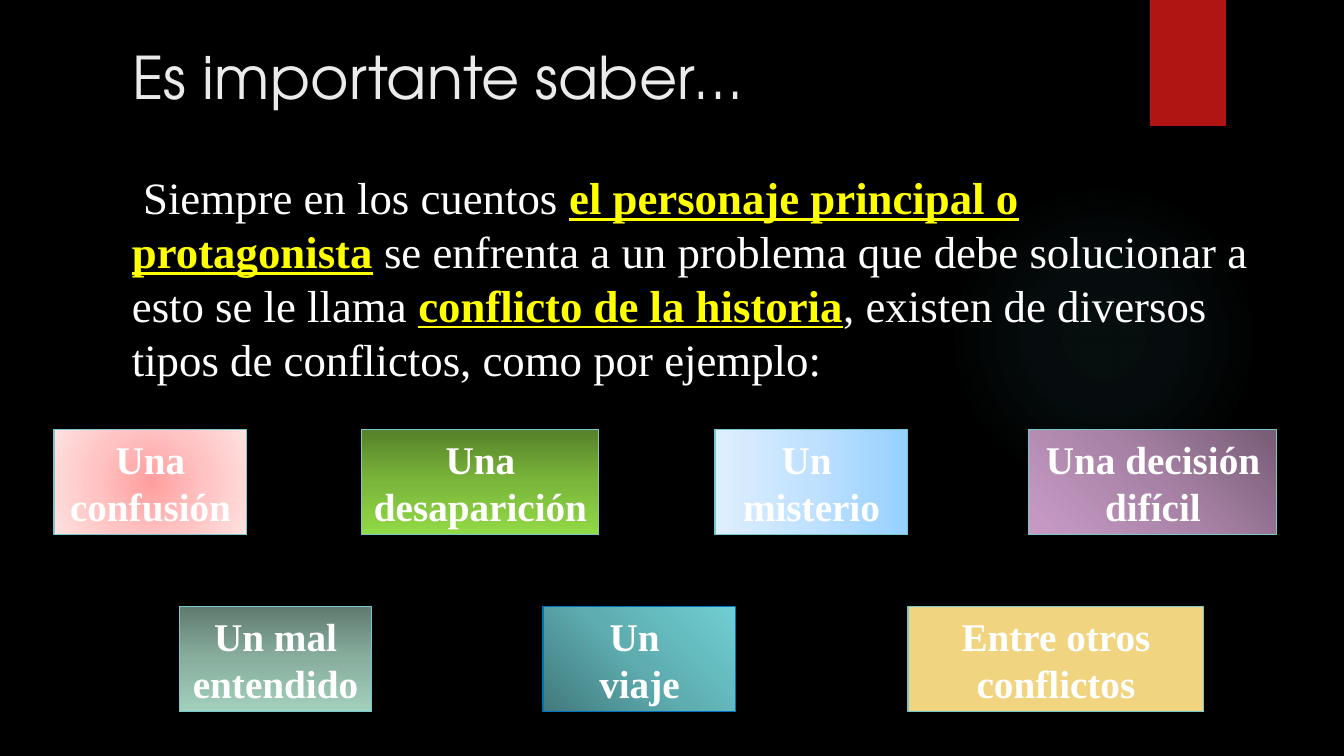
import lxml.etree
import pptx
import pptx.dml.color
import pptx.enum.shapes
import pptx.enum.text
import pptx.oxml.ns
import pptx.util

EMU_PER_PX = 12192000 / 1344
SERIF = "Times New Roman"
COLOURS = {
    "background": "000000",
    "ribbon": "B01513",
    "glow": "50B9C1",
    "title": "EBEBEB",
    "text": "FFFFFF",
    "key": "FFFF00",
    "border": "76C8CC",
    "blue_border": "0070C0",
    "sand": "F0D47F",
}

BODY = [  # text, is a key phrase
    (" Siempre en los cuentos ", False),
    ("el personaje principal o protagonista", True),
    (" se enfrenta a un problema que debe solucionar a esto se le llama ", False),
    ("conflicto de la historia", True),
    (", existen de diversos tipos de conflictos, como por ejemplo:", False),
]

# Each conflict: left, width, text, gradient colours, angle or focus rectangle
CONFLICT_ROWS = {
    430: [
        (54, 193, "Una confusión", ("FF9E9E", "FFC3C3", "FFE1E1"), (50, 50, 50, 50)),
        (362, 237, "Una desaparición", ("57812A", "7BB73B", "92DA46"), 90),
        (715, 193, "Un \nmisterio", ("96D0FF", "BFE1FF", "E0EFFF"), 180),
        (1029, 248, "Una decisión difícil", ("775C75", "A983A7", "C89BC6"), (100, 0, 0, 100)),
    ],
    607: [
        (179, 193, "Un mal entendido", ("607B70", "89AF9F", "A3D0BD"), 90),
        (543, 193, "Un \nviaje", ("427A7D", "5EAEB1", "70CED2"), (0, 100, 100, 0)),
        (908, 296, "Entre otros conflictos", None, None),
    ],
}
CONFLICT_HEIGHT = 105


def px(value):
    return round(value * EMU_PER_PX)


def box(*lengths):
    return [px(length) for length in lengths]


def colour(value):
    return pptx.dml.color.RGBColor.from_string(value)


def style_font(font, name, size, hex_colour, bold=False):
    font.name = name
    font.size = pptx.util.Pt(size)
    font.color.rgb = colour(hex_colour)
    font.bold = bold


def add_child(parent, tag, **attributes):
    child = lxml.etree.SubElement(parent, pptx.oxml.ns.qn(tag))
    for name, value in attributes.items():
        child.set(name, str(value))
    return child


def set_gradient(shape, stops, direction):
    """Stops are (position, colour, opacity); direction is degrees or a focus rectangle."""
    shape.fill.solid()
    solid = shape.element.spPr.find(pptx.oxml.ns.qn("a:solidFill"))
    gradient = lxml.etree.Element(pptx.oxml.ns.qn("a:gradFill"), rotWithShape="1")
    stop_list = add_child(gradient, "a:gsLst")
    for position, hex_colour, opacity in stops:
        stop = add_child(stop_list, "a:gs", pos=position * 1000)
        stop_colour = add_child(stop, "a:srgbClr", val=hex_colour)
        if opacity < 100:
            add_child(stop_colour, "a:alpha", val=opacity * 1000)
    if isinstance(direction, tuple):
        path = add_child(gradient, "a:path", path="circle")
        focus = {side: share * 1000 for side, share in zip("ltrb", direction)}
        add_child(path, "a:fillToRect", **focus)
    else:
        add_child(gradient, "a:lin", ang=direction * 60000, scaled=0)
    solid.getparent().replace(solid, gradient)


def add_plain_shape(slide, kind, left, top, width, height, fill):
    shape = slide.shapes.add_shape(kind, *box(left, top, width, height))
    shape.shadow.inherit = False
    shape.line.fill.background()
    shape.fill.solid()
    shape.fill.fore_color.rgb = colour(fill)
    return shape


def add_title(slide, text):
    title = slide.shapes.title
    title.left, title.top, title.width, title.height = box(122, 36, 1011, 127)
    frame = title.text_frame
    frame.text = text
    frame.word_wrap = True
    frame.auto_size = pptx.enum.text.MSO_AUTO_SIZE.NONE
    frame.vertical_anchor = pptx.enum.text.MSO_ANCHOR.TOP
    paragraph = frame.paragraphs[0]
    paragraph.alignment = pptx.enum.text.PP_ALIGN.LEFT
    style_font(paragraph.font, "TeX Gyre Adventor", 42, COLOURS["title"])


def add_body(slide, runs):
    frame = slide.shapes.add_textbox(*box(122, 163, 1144, 229)).text_frame
    frame.word_wrap = True
    frame.vertical_anchor = pptx.enum.text.MSO_ANCHOR.MIDDLE
    for text, is_key in runs:
        run = frame.paragraphs[0].add_run()
        run.text = text
        style_font(run.font, SERIF, 32, COLOURS["key" if is_key else "text"], is_key)
        run.font.underline = is_key


def add_conflict(slide, left, top, width, text, shades, direction):
    rectangle = pptx.enum.shapes.MSO_SHAPE.RECTANGLE
    shape = add_plain_shape(slide, rectangle, left, top, width, CONFLICT_HEIGHT, COLOURS["sand"])
    if shades:
        stops = [(50 * index, shade, 100) for index, shade in enumerate(shades)]
        set_gradient(shape, stops, direction)
    shape.line.color.rgb = colour(COLOURS["border"])
    shape.line.width = pptx.util.Pt(0.75)
    frame = shape.text_frame
    frame.text = text
    frame.word_wrap = True
    frame.auto_size = pptx.enum.text.MSO_AUTO_SIZE.SHAPE_TO_FIT_TEXT
    frame.vertical_anchor = pptx.enum.text.MSO_ANCHOR.MIDDLE
    for paragraph in frame.paragraphs:
        paragraph.alignment = pptx.enum.text.PP_ALIGN.CENTER
        style_font(paragraph.font, SERIF, 28, COLOURS["text"], True)
    return shape


def main():
    presentation = pptx.Presentation()
    presentation.slide_width, presentation.slide_height = box(1344, 756)
    slide = presentation.slides.add_slide(presentation.slide_layouts[5])
    slide.background.fill.solid()
    slide.background.fill.fore_color.rgb = colour(COLOURS["background"])

    # Background glow and ribbon
    shapes = pptx.enum.shapes.MSO_SHAPE
    glow = add_plain_shape(slide, shapes.OVAL, 949, 184, 310, 310, COLOURS["glow"])
    glow_stops = [(position, COLOURS["glow"], opacity)
                  for position, opacity in ((0, 7), (36, 6), (69, 0), (100, 0))]
    set_gradient(glow, glow_stops, (50, 50, 50, 50))
    add_plain_shape(slide, shapes.RECTANGLE, 1150, 0, 76, 126, COLOURS["ribbon"])

    # Title and explanation
    add_title(slide, "Es importante saber…")
    add_body(slide, BODY)

    # Two rows of conflict types
    for top, conflicts in CONFLICT_ROWS.items():
        for left, width, text, shades, direction in conflicts:
            shape = add_conflict(slide, left, top, width, text, shades, direction)
            if text.endswith("viaje"):
                shape.line.color.rgb = colour(COLOURS["blue_border"])

    presentation.save("out.pptx")


if __name__ == "__main__":
    main()
